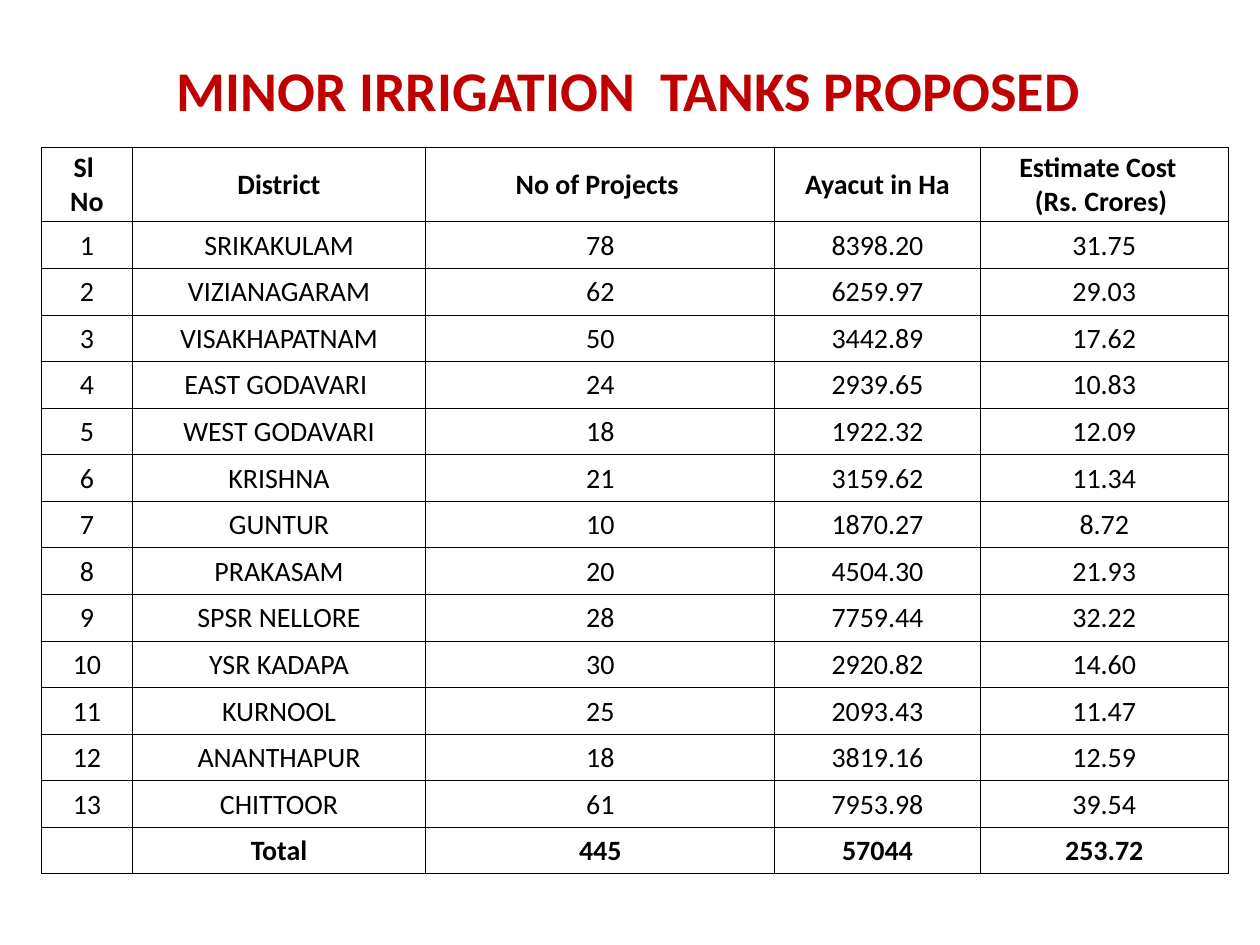
from lxml import etree
from pptx import Presentation, util as u
from pptx.dml.color import RGBColor
from pptx.enum import text
from pptx.oxml.ns import qn

SLIDE_W, SLIDE_H = 10, 7.5
COLUMN_WIDTHS = [0.72, 2.33, 2.77, 1.63, 1.97]
HEADER_HEIGHT, ROW_HEIGHT = 0.59, 0.37
HEADINGS = ["Sl \nNo", "District", "No of Projects ", "Ayacut in Ha",
            "Estimate Cost  \n(Rs. Crores) "]
DISTRICTS = [
    ("SRIKAKULAM", "78", "8398.20", "31.75"),
    ("VIZIANAGARAM", "62", "6259.97", "29.03"),
    ("VISAKHAPATNAM", "50", "3442.89", "17.62"),
    ("EAST GODAVARI ", "24", "2939.65", "10.83"),
    ("WEST GODAVARI", "18", "1922.32", "12.09"),
    ("KRISHNA", "21", "3159.62", "11.34"),
    ("GUNTUR", "10", "1870.27", "8.72"),
    ("PRAKASAM", "20", "4504.30", "21.93"),
    ("SPSR NELLORE", "28", "7759.44", "32.22"),
    ("YSR KADAPA", "30", "2920.82", "14.60"),
    ("KURNOOL", "25", "2093.43", "11.47"),
    ("ANANTHAPUR", "18", "3819.16", "12.59"),
    ("CHITTOOR", "61", "7953.98", "39.54"),
]
TOTALS = ["", "Total", "445", "57044", "253.72"]


def rgb(value):
    """Turn a hex string into a colour."""
    return RGBColor.from_string(value)


def write(frame, words, size, color, bold):
    """Fill a text frame with centred paragraphs, one for each line."""
    frame.text = words
    for paragraph in frame.paragraphs:
        paragraph.alignment = text.PP_ALIGN.CENTER
        font = paragraph.font
        font.name, font.size, font.bold = "Calibri", u.Pt(size), bold
        font.color.rgb = rgb(color)


def add_borders(cell, color, width):
    """Draw a solid line on all four sides of a cell."""
    properties = cell._tc.get_or_add_tcPr()
    for side in ("lnL", "lnR", "lnT", "lnB"):
        line = etree.SubElement(properties, qn(f"a:{side}"), w=str(u.Pt(width)))
        fill = etree.SubElement(line, qn("a:solidFill"))
        etree.SubElement(fill, qn("a:srgbClr"), val=color)


def fill_cell(cell, words, bold):
    """Write and format one table cell."""
    add_borders(cell, "000000", 0.5)
    cell.fill.background()
    cell.vertical_anchor = text.MSO_ANCHOR.MIDDLE
    cell.margin_left = cell.margin_right = cell.margin_top = u.Inches(0.01)
    cell.margin_bottom = 0
    write(cell.text_frame, words, 16, "000000", bold)


def place_title(slide, words):
    """Move and format the title placeholder."""
    title = slide.shapes.title
    title.left, title.top = u.Inches(0.5), u.Inches(0.42)
    title.width, title.height = u.Inches(9.08), u.Inches(0.58)
    title.text_frame.vertical_anchor = text.MSO_ANCHOR.MIDDLE
    write(title.text_frame, words, 32, "C00000", True)


def add_district_table(slide, left, top):
    """Add the table of districts between its heading and total rows."""
    numbered = [[str(n), *district] for n, district in enumerate(DISTRICTS, 1)]
    rows = [HEADINGS, *numbered, TOTALS]
    heights = [HEADER_HEIGHT] + [ROW_HEIGHT] * (len(rows) - 1)
    table = slide.shapes.add_table(
        len(rows), len(COLUMN_WIDTHS), u.Inches(left), u.Inches(top),
        u.Inches(sum(COLUMN_WIDTHS)), u.Inches(sum(heights))).table
    table.first_row = table.horz_banding = False
    for column, width in zip(table.columns, COLUMN_WIDTHS):
        column.width = u.Inches(width)
    for row, height, entries in zip(table.rows, heights, rows):
        row.height = u.Inches(height)
        for cell, words in zip(row.cells, entries):
            fill_cell(cell, words, entries in (HEADINGS, TOTALS))


def main():
    """Build and save the slide."""
    deck = Presentation()
    deck.slide_width, deck.slide_height = u.Inches(SLIDE_W), u.Inches(SLIDE_H)
    slide = deck.slides.add_slide(deck.slide_layouts[5])
    place_title(slide, "MINOR IRRIGATION  TANKS PROPOSED ")
    add_district_table(slide, 0.33, 1.17)
    deck.save("out.pptx")


if __name__ == "__main__":
    main()
